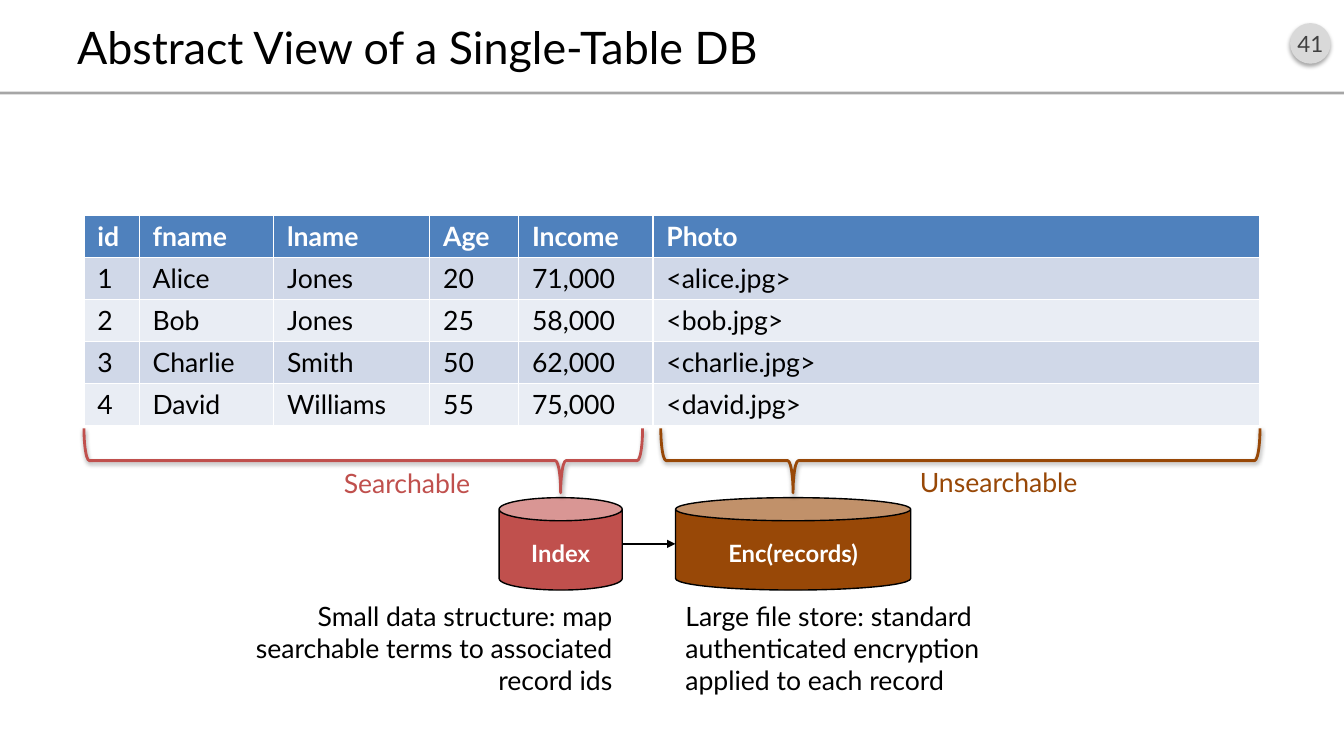
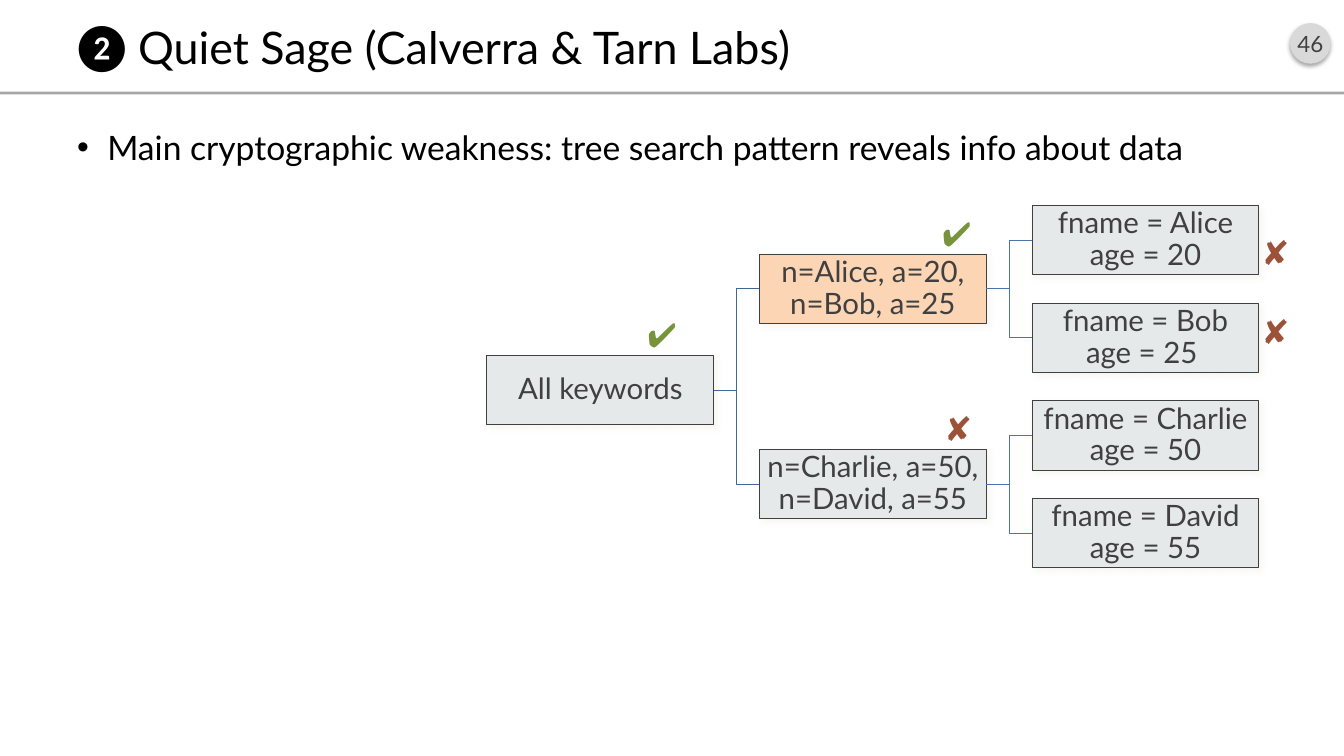
from lxml.etree import SubElement as Sub
from pptx import Presentation
from pptx.dml.color import RGBColor as RGB
from pptx.enum.shapes import MSO_CONNECTOR as Link, MSO_SHAPE as Kind
from pptx.enum.text import MSO_ANCHOR as Anchor, PP_ALIGN as Align
from pptx.oxml.ns import qn
from pptx.util import Pt

FONT = "Lato"
BLACK, WHITE, DARK = "000000", "FFFFFF", "404040"
RED, BROWN = "C0504D", "984807"
BLUE, BANDS = "4F81BD", ("D0D8E8", "E9EDF4")
PALE, PEACH = "E5E9EA", "FCD5B5"
YES, NO = ("✔", "77933C"), ("✘", "9C5238")
GLOW = ("EEECE1", 40, 4, 3, 45)


def tint(code):
    return RGB.from_string(code)


class Deck:
    """Holds the shared style and the current slide."""

    def __init__(self):
        self.prs = Presentation()
        self.prs.slide_width, self.prs.slide_height = Pt(960), Pt(540)

    # Slide frame: number badge, rule and title
    def page(self, title, num):
        self.slide = self.prs.slides.add_slide(self.prs.slide_layouts[6])
        self.items = self.slide.shapes
        badge = self.shape(Kind.OVAL, 921.5, 16.5, 29, 29, "D9D9D9",
                           shade=(BLACK, 35, 3.1, 1.8, 90))
        self.put(badge.text_frame, num, 16, DARK, Align.CENTER,
                 Anchor.MIDDLE, pad=(0, 3.6))
        self.shape(Kind.RECTANGLE, 0, 65.5, 960, 2, "A6A6A6")
        self.text(title, 48, 11.5, 864, 43, 32, anchor=Anchor.MIDDLE)

    # Text, one run per line
    def put(self, frame, text, size, color=BLACK, align=Align.LEFT,
            anchor=Anchor.TOP, bold=False, pad=(7.2, 3.6), lead=None):
        frame.word_wrap = True
        frame.vertical_anchor = anchor
        frame.margin_left = frame.margin_right = Pt(pad[0])
        frame.margin_top = frame.margin_bottom = Pt(pad[1])
        para = frame.paragraphs[0]
        para.alignment = align
        if lead:
            para.line_spacing = lead
        for i, line in enumerate(text.split("\n")):
            if i:
                para.add_line_break()
            run = para.add_run()
            run.text = line
            font = run.font
            font.name, font.size, font.bold = FONT, Pt(size), bold
            font.color.rgb = tint(color)
        return para

    def text(self, text, x, y, w, h, size, color=BLACK, **style):
        box = self.items.add_textbox(Pt(x), Pt(y), Pt(w), Pt(h))
        return self.put(box.text_frame, text, size, color, **style)

    def bullet(self, text, x, y, w, h, size):
        props = self.text(text, x, y, w, h, size)._p.get_or_add_pPr()
        props.set("marL", str(Pt(21.6)))
        props.set("indent", str(-Pt(21.6)))
        Sub(props, qn("a:buFont"), typeface="Arial")
        Sub(props, qn("a:buChar"), char="•")

    # Preset shape; shade is colour, opacity, blur, distance, angle
    def shape(self, kind, x, y, w, h, fill=None, line=None, width=1,
              shade=None):
        item = self.items.add_shape(kind, Pt(x), Pt(y), Pt(w), Pt(h))
        item.shadow.inherit = False
        if fill:
            item.fill.solid()
            item.fill.fore_color.rgb = tint(fill)
        else:
            item.fill.background()
        if line:
            item.line.color.rgb = tint(line)
            item.line.width = Pt(width)
        else:
            item.line.fill.background()
        if shade:
            color, alpha, blur, dist, angle = shade
            effect = item._element.spPr.find(qn("a:effectLst"))
            outer = Sub(effect, qn("a:outerShdw"), blurRad=str(Pt(blur)),
                        dist=str(Pt(dist)), dir=str(angle * 60000),
                        rotWithShape="0")
            clr = Sub(outer, qn("a:srgbClr"), val=color)
            Sub(clr, qn("a:alpha"), val=str(alpha * 1000))
        return item

    def can(self, text, x, y, w, h, fill):
        item = self.shape(Kind.CAN, x, y, w, h, fill, BLACK)
        self.put(item.text_frame, text, 17, WHITE, Align.CENTER,
                 Anchor.MIDDLE, bold=True, lead=1.2)

    # Brace lying on its side, pointing down at the x position tip
    def brace(self, x, y, w, h, tip, color):
        turn = (w - h) / 2
        item = self.shape(Kind.LEFT_BRACE, x + turn, y - turn, h, w,
                          line=color, width=2,
                          shade=(BLACK, 38, 3.1, 1.6, 90))
        item.rotation = 270
        item.adjustments[1] = (tip - x) / w

    def node(self, text, x, y, w, h, fill):
        item = self.shape(Kind.RECTANGLE, x, y, w, h, fill, DARK, 0.75, GLOW)
        self.put(item.text_frame, text, 21, DARK, Align.CENTER,
                 Anchor.MIDDLE, pad=(0.7, 0.7), lead=0.9)
        return item

    # Lines
    def link(self, kind, color, width, x1=0, y1=0, x2=0, y2=0):
        line = self.items.add_connector(kind, Pt(x1), Pt(y1), Pt(x2), Pt(y2))
        line.line.color.rgb = tint(color)
        line.line.width = Pt(width)
        Sub(line._element.spPr, qn("a:effectLst"))
        return line

    def arrow(self, x1, y1, x2, y2):
        line = self.link(Link.STRAIGHT, BLACK, 1, x1, y1, x2, y2)
        Sub(line._element.spPr.find(qn("a:ln")), qn("a:tailEnd"),
            type="triangle", w="med", len="med")

    def join(self, start, end, color):
        line = self.link(Link.ELBOW, color, 0.75)
        line.begin_connect(start, 3)
        line.end_connect(end, 1)

    # Table with a header row and striped body
    def table(self, rows, x, y, cols, high):
        grid = self.items.add_table(len(rows), len(cols), Pt(x), Pt(y),
                                    Pt(sum(cols)), Pt(high * len(rows))).table
        for col, wide in zip(grid.columns, cols):
            col.width = Pt(wide)
        for r, row in enumerate(rows):
            grid.rows[r].height = Pt(high)
            head = r == 0
            for c, text in enumerate(row):
                cell = grid.cell(r, c)
                cell.fill.solid()
                cell.fill.fore_color.rgb = tint(
                    BLUE if head else BANDS[(r - 1) % 2])
                self.put(cell.text_frame, text, 19,
                         WHITE if head else BLACK, bold=head)
                cell.margin_left = cell.margin_right = Pt(9.6)
                cell.margin_top = cell.margin_bottom = Pt(3.6)


def store(deck):
    deck.page("Abstract View of a Single-Table DB", "41")
    deck.table([
        ("id", "fname", "lname", "Age", "Income", "Photo"),
        ("1", "Alice", "Jones", "20", "71,000", "<alice.jpg>"),
        ("2", "Bob", "Jones", "25", "58,000", "<bob.jpg>"),
        ("3", "Charlie", "Smith", "50", "62,000", "<charlie.jpg>"),
        ("4", "David", "Williams", "55", "75,000", "<david.jpg>"),
    ], 60, 154, (39.5, 96, 111.5, 63.5, 96, 433.5), 30)

    # Two stores, each under its brace
    parts = [
        ("Index", 356.5, 88, RED, 60, 399),
        ("Enc(records)", 482.5, 168, BROWN, 472, 428),
    ]
    for name, x, w, color, left, span in parts:
        deck.can(name, x, 355.5, w, 66, color)
        deck.brace(left, 306, span, 46, x + w / 2, color)
    deck.arrow(444.5, 388.5, 482.5, 388.5)

    # Labels
    deck.text("Searchable", 203, 330, 140, 30, 19, RED, align=Align.RIGHT)
    deck.text("Unsearchable", 650, 329, 172, 30, 19, BROWN)
    deck.text("Small data structure: map searchable terms to associated "
              "record ids", 166.5, 425, 278, 76, 19, align=Align.RIGHT)
    deck.text("Large file store: standard authenticated encryption "
              "applied to each record", 482.5, 425, 289, 76, 19)


def search(deck):
    deck.page("❷ Quiet Sage (Calverra & Tarn Labs)", "46")
    deck.bullet("Main cryptographic weakness: tree search pattern reveals "
                "info about data", 48, 87, 864, 414, 24)

    # Binary tree, level by level: top, step, line colour, labels
    levels = [
        (254, 0, None, ["All keywords"]),
        (181.6, 139.6, "3F6797", ["n=Alice, a=20,\nn=Bob, a=25",
                                  "n=Charlie, a=50,\nn=David, a=55"]),
        (146.8, 69.8, "4875AC", ["fname = Alice\nage = 20",
                                 "fname = Bob\nage = 25 ",
                                 "fname = Charlie\nage = 50",
                                 "fname = David\nage = 55"]),
    ]
    above = []
    for depth, (top, step, color, labels) in enumerate(levels):
        nodes = []
        for i, label in enumerate(labels):
            fill = PEACH if (depth, i) == (1, 0) else PALE
            node = deck.node(label, 347.8 + 194.7 * depth, top + step * i,
                             162, 49.5, fill)
            if above:
                deck.join(above[i // 2], node, color)
            nodes.append(node)
        above = nodes

    # Match marks
    marks = [(NO, 657.5, 291), (YES, 446, 224.5), (YES, 656.5, 152),
             (NO, 884, 165.5), (NO, 884, 222)]
    for (sign, color), x, y in marks:
        deck.text(sign, x, y, 54, 29, 24, color, align=Align.CENTER,
                  pad=(0, 0))


def main():
    deck = Deck()
    store(deck)
    search(deck)
    deck.prs.save("out.pptx")


if __name__ == "__main__":
    main()
